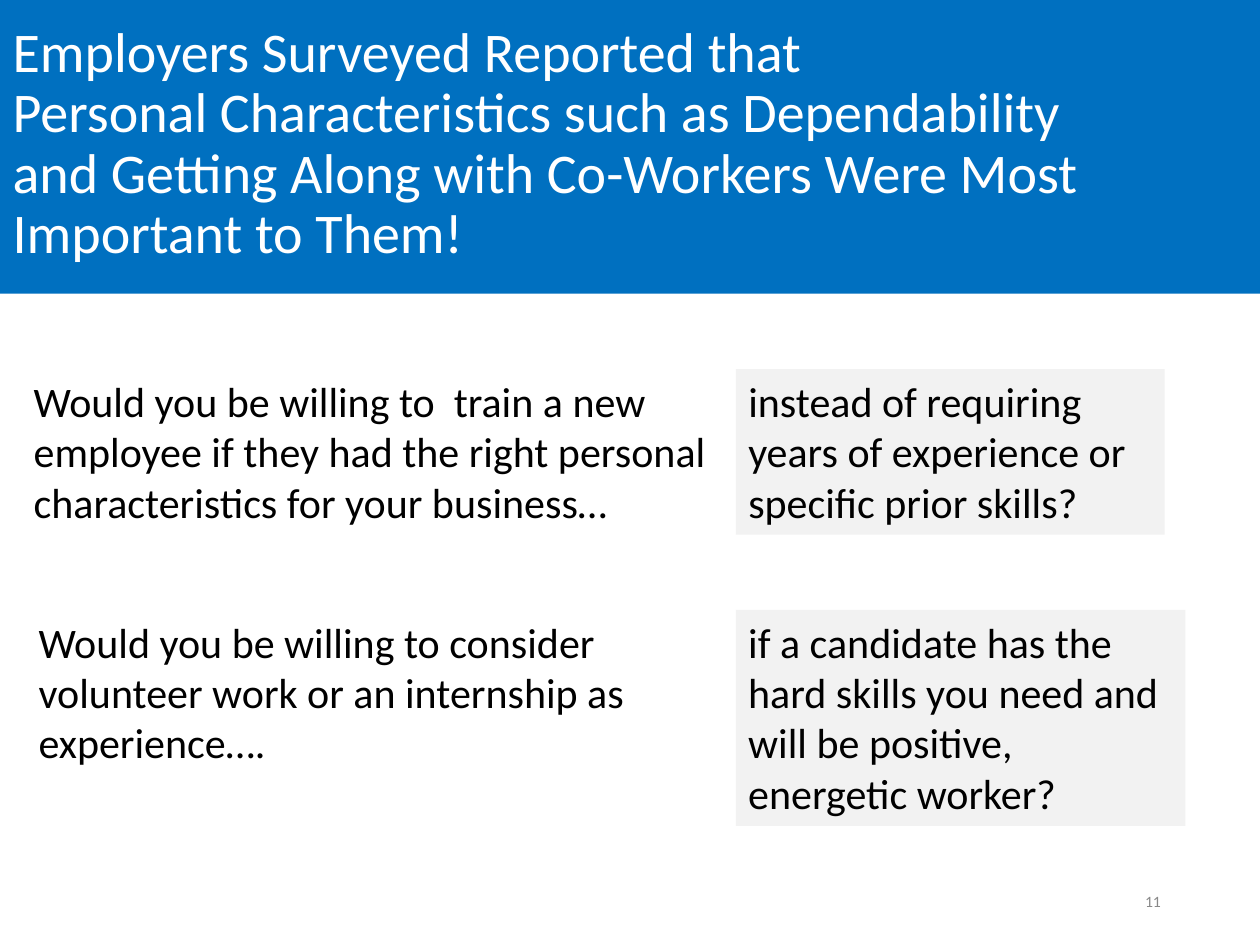
from pptx import Presentation
from pptx.dml.color import RGBColor
from pptx.enum.shapes import MSO_SHAPE
from pptx.enum.text import MSO_ANCHOR, MSO_AUTO_SIZE, PP_ALIGN
from pptx.util import Pt

COLORS = {
    "banner": "0070C0",
    "panel": "F2F2F2",
    "title": "FFFFFF",
    "text": "000000",
    "number": "898989",
}
FONT = "Calibri"
TITLE_LINES = [
    "Employers Surveyed Reported that",
    "Personal Characteristics such as Dependability",
    "and Getting Along with Co-Workers Were Most Important to Them!",
]
ANSWER_LEFT = 420.5
# Each row: top, question (left, width, text), answer (width, height, text)
ROWS = [
    (211,
     (12.2, 424, "Would you be willing to  train a new employee if they had "
                 "the right personal characteristics for your business…"),
     (245, 94.5, "instead of requiring years of experience or specific prior skills?")),
    (348.5,
     (15, 397.5, "Would you be willing to consider volunteer work or an "
                 "internship as experience…."),
     (257, 123.5, "if a candidate has the hard skills you need and will be "
                  "positive, energetic worker?")),
]
QUESTION_HEIGHT = 94.5


def color(name):
    return RGBColor.from_string(COLORS[name])


def fill_solid(shape, name):
    shape.fill.solid()
    shape.fill.fore_color.rgb = color(name)


def add_run(paragraph, text, size, color_name):
    run = paragraph.add_run()
    run.text = text
    run.font.name = FONT
    run.font.size = Pt(size)
    run.font.color.rgb = color(color_name)


def format_frame(frame, anchor, align):
    """Set wrapping, anchor and alignment; return the first paragraph."""
    frame.word_wrap = True
    frame.auto_size = MSO_AUTO_SIZE.NONE
    frame.vertical_anchor = anchor
    paragraph = frame.paragraphs[0]
    paragraph.alignment = align
    return paragraph


def place(shape, left, top, width, height):
    shape.left, shape.top = Pt(left), Pt(top)
    shape.width, shape.height = Pt(width), Pt(height)


def add_title(slide):
    banner = slide.shapes.title
    place(banner, 0, 0, 720, 167.8)
    fill_solid(banner, "banner")
    banner.text_frame.margin_bottom = Pt(6)
    paragraph = format_frame(banner.text_frame, MSO_ANCHOR.MIDDLE, PP_ALIGN.LEFT)
    paragraph.line_spacing = 0.9
    for index, line in enumerate(TITLE_LINES):
        if index:
            paragraph.add_line_break()
        add_run(paragraph, line, 32, "title")


def add_question(slide, left, top, width, text):
    question = slide.shapes.add_textbox(Pt(left), Pt(top), Pt(width), Pt(QUESTION_HEIGHT))
    paragraph = format_frame(question.text_frame, MSO_ANCHOR.TOP, PP_ALIGN.LEFT)
    add_run(paragraph, text, 24, "text")


def add_answer(slide, top, width, height, text):
    answer = slide.shapes.add_shape(
        MSO_SHAPE.RECTANGLE, Pt(ANSWER_LEFT), Pt(top), Pt(width), Pt(height))
    answer.shadow.inherit = False
    fill_solid(answer, "panel")
    answer.line.fill.background()
    paragraph = format_frame(answer.text_frame, MSO_ANCHOR.TOP, PP_ALIGN.LEFT)
    add_run(paragraph, text, 24, "text")


def add_slide_number(slide, number):
    footer = slide.shapes.add_textbox(Pt(508.5), Pt(500.5), Pt(162), Pt(28.75))
    paragraph = format_frame(footer.text_frame, MSO_ANCHOR.MIDDLE, PP_ALIGN.RIGHT)
    add_run(paragraph, number, 9, "number")


def main():
    deck = Presentation()
    deck.slide_width, deck.slide_height = Pt(720), Pt(540)
    slide = deck.slides.add_slide(deck.slide_layouts.get_by_name("Title Only"))
    add_title(slide)
    for top, (left, question_width, question), (width, height, answer) in ROWS:
        add_question(slide, left, top, question_width, question)
        add_answer(slide, top, width, height, answer)
    add_slide_number(slide, "11")
    deck.save("out.pptx")


if __name__ == "__main__":
    main()
